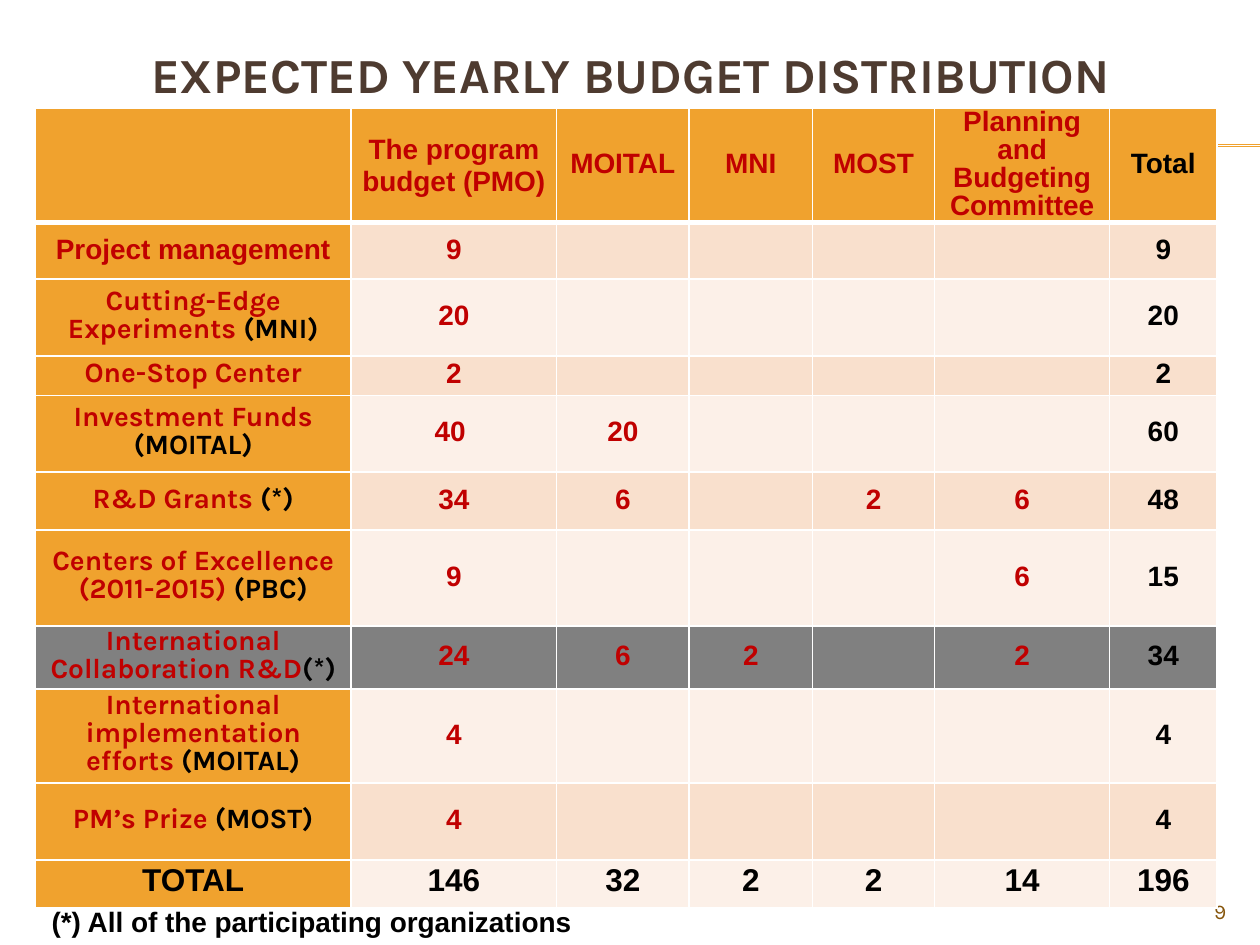
"""Build the slide with the expected yearly budget distribution table."""
from lxml.etree import SubElement
from pptx import Presentation
from pptx.dml.color import RGBColor
from pptx.enum.shapes import MSO_CONNECTOR as Connector
from pptx.enum.text import MSO_ANCHOR as Anchor, PP_ALIGN as Align
from pptx.oxml.ns import qn
from pptx.util import Cm, Pt

ORANGE = RGBColor(0xF0, 0xA2, 0x2E)
DARK_BAND = RGBColor(0xF9, 0xE0, 0xCD)
LIGHT_BAND = RGBColor(0xFC, 0xF0, 0xE8)
GREY = RGBColor(0x80, 0x80, 0x80)
RED = RGBColor(0xC0, 0x00, 0x00)
BLACK = RGBColor(0x00, 0x00, 0x00)
WHITE = RGBColor(0xFF, 0xFF, 0xFF)
BROWN = RGBColor(0x4E, 0x3B, 0x30)
OCHRE = RGBColor(0x85, 0x54, 0x0A)

COLUMN_WIDTHS = [6.37, 4.14, 2.67, 2.49, 2.46, 3.53, 2.16]
ROW_HEIGHTS = [2.31, 1.14, 1.55, 0.79, 1.55, 1.17, 1.93, 1.27, 1.9, 1.55, 0.97]
BUDGET = [
    ["", "The program budget (PMO)", "MOITAL", "MNI", "MOST",
     "Planning and Budgeting Committee", "Total"],
    ["Project management", "9", "", "", "", "", "9"],
    ["Cutting-Edge Experiments |(MNI)", "20", "", "", "", "", "20"],
    ["One-Stop Center", "2", "", "", "", "", "2"],
    ["Investment Funds |(MOITAL)", "40 ", "20", "", "", "", "60"],
    ["R&D Grants |(*)", "34", "6", "", "2", "6", "48"],
    ["Centers of Excellence (2011-2015)| (PBC)", "9", "", "", "", "6", "15"],
    ["International Collaboration R&D|(*)", "24", "6", "2", "", "2", "34"],
    ["International implementation efforts |(MOITAL)", "4", "", "", "", "", "4"],
    ["PM’s Prize |(MOST)", "4", "", "", "", "", "4"],
    ["TOTAL", "146", "32", "2", "2", "14", "196"],
]
LAST_ROW = len(ROW_HEIGHTS) - 1
LAST_COLUMN = len(COLUMN_WIDTHS) - 1
HIGHLIGHT_ROW = 7


def style(font, name, size, color, bold=True):
    font.name, font.size, font.bold = name, Pt(size), bold
    font.color.rgb = color


def add_text(page, place, text, align, anchor, look):
    box = page.shapes.add_textbox(*[Cm(length) for length in place])
    frame = box.text_frame
    frame.word_wrap = True
    frame.vertical_anchor = anchor
    frame.text = text
    frame.paragraphs[0].alignment = align
    style(frame.paragraphs[0].runs[0].font, *look)


deck = Presentation()
deck.slide_width, deck.slide_height = Cm(25.4), Cm(19.05)
page = deck.slides.add_slide(deck.slide_layouts[6])

for height in (2.92, 2.95):
    rule = page.shapes.add_connector(
        Connector.STRAIGHT, Cm(1.42), Cm(height), Cm(25.4), Cm(height))
    rule.line.color.rgb = ORANGE
    rule.line.width = Pt(0.75)
    SubElement(rule._element.spPr, qn("a:effectLst"))

add_text(page, (0.64, 0.33, 24.13, 2.34), "EXPECTED YEARLY BUDGET DISTRIBUTION",
         Align.CENTER, Anchor.MIDDLE, ("Karla", 28, BROWN))
add_text(page, (22.86, 17.98, 2.11, 0.69), "9",
         Align.RIGHT, Anchor.TOP, ("Karla", 12, OCHRE, False))

table = page.shapes.add_table(
    len(ROW_HEIGHTS), len(COLUMN_WIDTHS), Cm(0.71), Cm(2.18),
    Cm(sum(COLUMN_WIDTHS)), Cm(sum(ROW_HEIGHTS))).table
for column, width in zip(table.columns, COLUMN_WIDTHS):
    column.width = Cm(width)
for row, height in zip(table.rows, ROW_HEIGHTS):
    row.height = Cm(height)

for r, values in enumerate(BUDGET):
    for c, value in enumerate(values):
        cell = table.cell(r, c)
        cell.margin_left = cell.margin_right = Cm(0.13)
        cell.margin_top = cell.margin_bottom = 0
        cell.vertical_anchor = Anchor.MIDDLE

        for side in ("L", "R", "T", "B"):
            heavy = (r, side) in ((0, "B"), (1, "T"))
            edge = SubElement(cell._tc.get_or_add_tcPr(), qn(f"a:ln{side}"),
                              w=str(Pt(3 if heavy else 1)))
            paint = SubElement(edge, qn("a:solidFill"))
            SubElement(paint, qn("a:srgbClr"), val=str(WHITE))

        if r == HIGHLIGHT_ROW:
            fill = GREY
        elif r == 0 or c == 0:
            fill = ORANGE
        else:
            fill = DARK_BAND if r % 2 else LIGHT_BAND
        cell.fill.solid()
        cell.fill.fore_color.rgb = fill

        para = cell.text_frame.paragraphs[0]
        para.alignment = Align.CENTER
        para.line_spacing = Pt(18 if (r, c) == (0, 1) else 16)
        if not value:
            continue
        name = "Karla" if c == 0 and 1 < r < LAST_ROW else "Arial"
        size = 18 if r == LAST_ROW else 16
        for part, text in enumerate(value.split("|")):
            span = para.add_run()
            span.text = text
            dark = part or r == LAST_ROW or c == LAST_COLUMN
            style(span.font, name, size, BLACK if dark else RED)

add_text(page, (0.79, 18.11, 20.4, 0.94), "(*) All of the participating organizations",
         Align.LEFT, Anchor.TOP, ("Arial", 16, BLACK))

deck.save("out.pptx")
